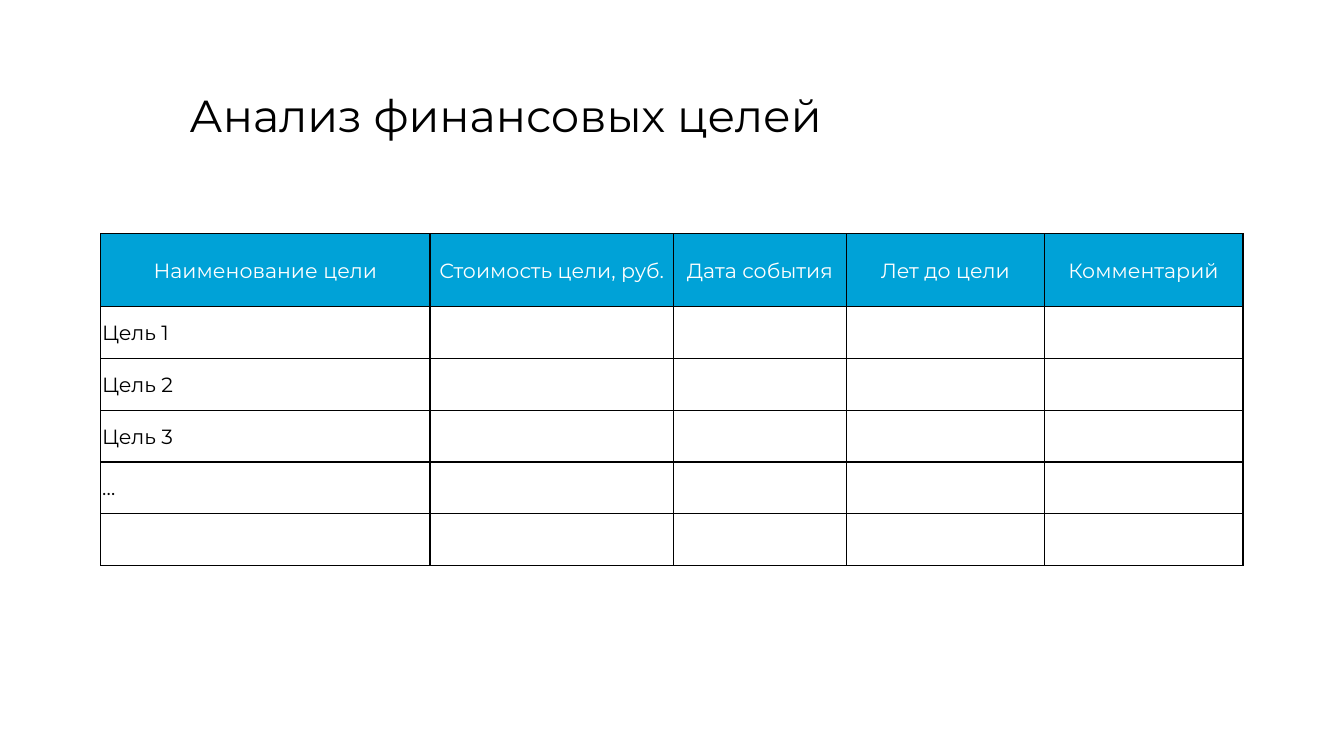
from dataclasses import dataclass

from lxml.etree import SubElement
from pptx import Presentation
from pptx.dml.color import RGBColor
from pptx.enum.text import MSO_ANCHOR, PP_ALIGN
from pptx.oxml.ns import qn
from pptx.util import Inches, Pt

FONT = "Montserrat"
COLORS = {"head": "00A2D7", "light": "FEFEFE", "ink": "000000"}
GOALS = ["Цель 1", "Цель 2", "Цель 3", "…", ""]
WIDE = 10
HEAD_TALL = 0.54
ROW_TALL = 1.93 / len(GOALS)


@dataclass
class Column:
    title: str
    width: float


COLUMNS = [
    Column("Наименование цели", 2.45),
    Column("Стоимость цели, руб.", 1.81),
    Column("Дата события", 1.29),
    Column("Лет до цели", 1.47),
    Column("Комментарий", 1.48),
]


def style(frame, size: float, color: str) -> None:
    """Format the text of a frame."""
    for para in frame.paragraphs:
        para.font.size = Pt(size)
        for run in para.runs:
            run.font.name = FONT
            run.font.size = Pt(size)
            run.font.color.rgb = RGBColor.from_string(COLORS[color])


def border(cell, width: float = 0.75) -> None:
    """Rule all four sides; lines must precede the fill."""
    props = cell._tc.get_or_add_tcPr()
    for side in ("a:lnL", "a:lnR", "a:lnT", "a:lnB"):
        line = SubElement(props, qn(side), w=str(Pt(width)))
        fill = SubElement(line, qn("a:solidFill"))
        SubElement(fill, qn("a:srgbClr"), val=COLORS["ink"])


def fill_cell(cell, text: str, head: bool) -> None:
    """Write and format one table cell."""
    border(cell)
    cell.vertical_anchor = MSO_ANCHOR.MIDDLE
    cell.margin_left = cell.margin_right = cell.margin_top = Inches(0.01)
    cell.margin_bottom = 0
    cell.text_frame.text = text
    style(cell.text_frame, 11, "light" if head else "ink")
    if head:
        cell.fill.solid()
        cell.fill.fore_color.rgb = RGBColor.from_string(COLORS["head"])
        cell.text_frame.paragraphs[0].alignment = PP_ALIGN.CENTER
    else:
        cell.fill.background()


def add_title(slide, text: str) -> None:
    """Place the heading."""
    box = slide.shapes.add_textbox(
        Inches(1.34), Inches(0.57), Inches(6.73), Inches(0.62))
    frame = box.text_frame
    frame.word_wrap = True
    frame.vertical_anchor = MSO_ANCHOR.MIDDLE
    frame.margin_left = frame.margin_right = Inches(0.07)
    frame.margin_top = frame.margin_bottom = Inches(0.04)
    frame.text = text
    frame.paragraphs[0].line_spacing = 0.9
    style(frame, 24, "ink")


def add_goals(slide) -> None:
    """Draw the table: a header row, then one row per goal."""
    rows = [[col.title for col in COLUMNS]]
    rows += [[goal] + [""] * (len(COLUMNS) - 1) for goal in GOALS]
    wide = sum(col.width for col in COLUMNS)
    tall = HEAD_TALL + ROW_TALL * len(GOALS)
    table = slide.shapes.add_table(
        len(rows), len(COLUMNS), Inches(0.75), Inches(1.74),
        Inches(wide), Inches(tall)).table
    table.horz_banding = False
    table.first_row = False
    for c, col in enumerate(COLUMNS):
        table.columns[c].width = Inches(col.width)
    for r, row in enumerate(rows):
        table.rows[r].height = Inches(ROW_TALL if r else HEAD_TALL)
        for c, text in enumerate(row):
            fill_cell(table.cell(r, c), text, head=r == 0)


def main() -> None:
    deck = Presentation()
    # Widescreen, 16 to 9
    deck.slide_width, deck.slide_height = Inches(WIDE), Inches(WIDE * 9 / 16)
    slide = deck.slides.add_slide(deck.slide_layouts[6])
    # Table of goals, then the heading
    add_goals(slide)
    add_title(slide, "Анализ финансовых целей")
    deck.save("out.pptx")


if __name__ == "__main__":
    main()
